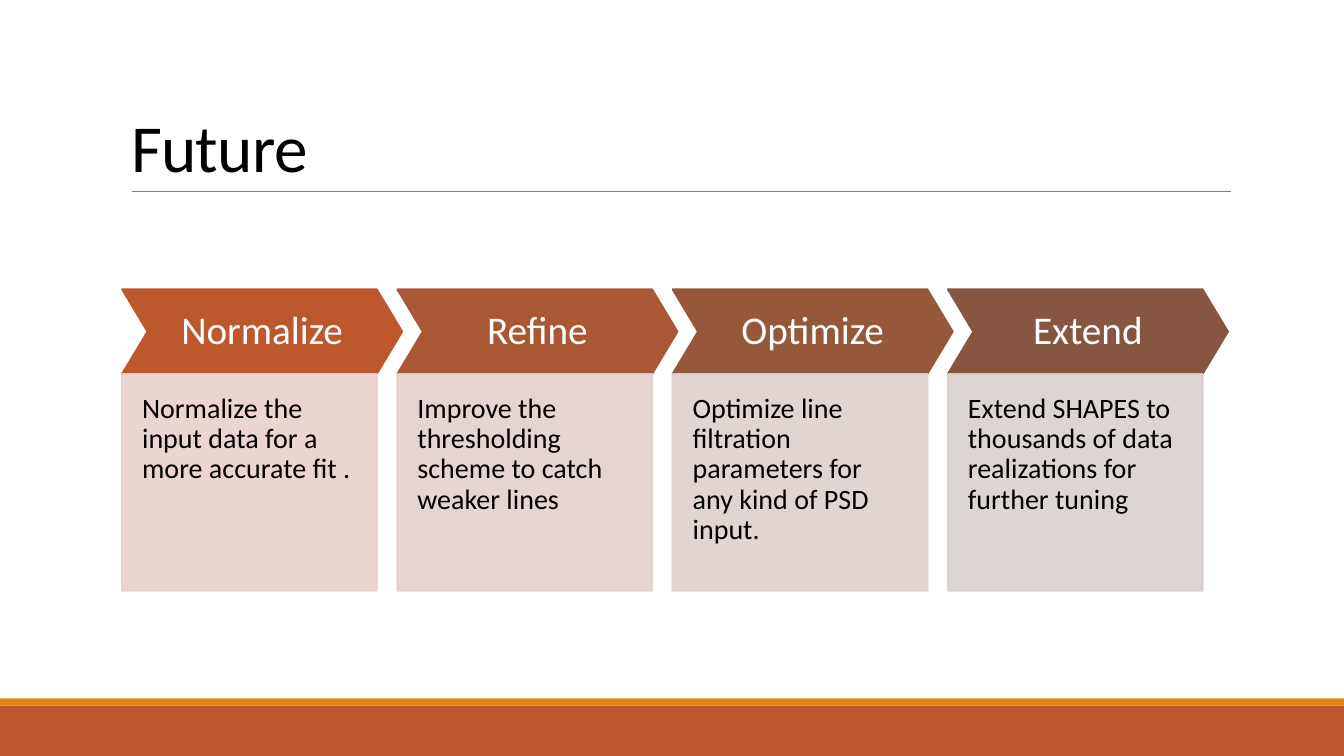
from lxml import etree
from pptx import Presentation
from pptx.dml.color import RGBColor
from pptx.enum.shapes import MSO_CONNECTOR, MSO_SHAPE
from pptx.enum.text import MSO_ANCHOR, MSO_AUTO_SIZE, PP_ALIGN
from pptx.oxml.ns import qn
from pptx.util import Inches, Pt

RECT, CHEVRON = MSO_SHAPE.RECTANGLE, MSO_SHAPE.CHEVRON
STRAIGHT = MSO_CONNECTOR.STRAIGHT
TOP, MIDDLE, BOTTOM = MSO_ANCHOR.TOP, MSO_ANCHOR.MIDDLE, MSO_ANCHOR.BOTTOM
LEFT, CENTER = PP_ALIGN.LEFT, PP_ALIGN.CENTER
NO_FIT = MSO_AUTO_SIZE.NONE

FONT = "Calibri"
BLACK = RGBColor(0x00, 0x00, 0x00)
WHITE = RGBColor(0xFF, 0xFF, 0xFF)
GRAY = RGBColor(0x80, 0x80, 0x80)
RUST = RGBColor(0xBD, 0x58, 0x2C)
ORANGE = RGBColor(0xE4, 0x83, 0x12)

# Heading, detail, chevron colour, panel colour
STEPS = [
    ("Normalize", "Normalize the input data for a more accurate fit .",
     RUST, RGBColor(0xE8, 0xD1, 0xCD)),
    ("Refine", "Improve the thresholding scheme to catch weaker lines",
     RGBColor(0xAA, 0x58, 0x34), RGBColor(0xE3, 0xD1, 0xCD)),
    ("Optimize", "Optimize line filtration parameters for any kind of PSD input.",
     RGBColor(0x97, 0x57, 0x3A), RGBColor(0xDE, 0xD1, 0xCE)),
    ("Extend", "Extend SHAPES to thousands of data realizations for further tuning",
     RGBColor(0x86, 0x56, 0x40), RGBColor(0xD9, 0xD1, 0xCF)),
]


def add_block(slide, kind, box, color, edge=False):
    shape = slide.shapes.add_shape(kind, *map(Inches, box))
    shape.shadow.inherit = False
    shape.fill.solid()
    shape.fill.fore_color.rgb = color
    if edge:
        shape.line.color.rgb = color
        shape.line.width = Pt(1.25)
    else:
        shape.line.fill.background()
    return shape


def set_text(shape, text, size, color, align, anchor, insets, spacing):
    frame = shape.text_frame
    frame.word_wrap = True
    frame.auto_size = NO_FIT
    frame.vertical_anchor = anchor
    (frame.margin_left, frame.margin_top,
     frame.margin_right, frame.margin_bottom) = map(Inches, insets)
    para = frame.paragraphs[0]
    para.alignment = align
    para.line_spacing = spacing
    run = para.add_run()
    run.text = text
    run.font.name = FONT
    run.font.size = Pt(size)
    run.font.color.rgb = color
    return run


def fade(shape, percent):
    for color in shape._element.spPr.iter(qn("a:srgbClr")):
        etree.SubElement(color, qn("a:alpha"), val=str(percent * 1000))


def add_footer(slide, left, top, width, height):
    stripe = 0.07
    add_block(slide, RECT, (left, top + stripe, width, height - stripe), RUST)
    add_block(slide, RECT, (left, top, width, stripe), ORANGE)


def add_title(slide, left, top, width, height):
    # Rule below the heading
    base = Inches(top + height)
    rule = slide.shapes.add_connector(
        STRAIGHT, Inches(left + 0.11), base, Inches(left + width + 0.01), base)
    rule.line.color.rgb = GRAY
    rule.line.width = Pt(0.5)
    etree.SubElement(rule._element.spPr, qn("a:effectLst"))
    # Heading
    title = slide.shapes.title
    title.left, title.top = Inches(left), Inches(top)
    title.width, title.height = Inches(width), Inches(height)
    run = set_text(title, "Future", 48, BLACK, LEFT, BOTTOM,
                   (0.1, 0.05, 0.1, 0.05), 0.85)
    run.font._element.set("spc", "-50")


def add_step(slide, left, top, width, height, step):
    name, detail, dark, pale = step
    head, tip = 0.84, 0.25
    # Chevron heading
    arrow = add_block(slide, CHEVRON, (left, top, width, head), dark, True)
    arrow.adjustments[0] = 0.3
    set_text(arrow, name, 28, WHITE, CENTER, MIDDLE, (0.1,) * 4, 0.9)
    # Detail panel
    panel = add_block(slide, RECT, (left, top + head, width - tip, height - head),
                      pale, True)
    fade(panel, 90)
    set_text(panel, detail, 20, BLACK, LEFT, TOP, (0.2, 0.2, 0.2, 0.4), 0.9)


def add_steps(slide, left, top, width, height):
    pitch = 2.73
    last = width - pitch * (len(STEPS) - 1)
    for i, step in enumerate(STEPS):
        add_step(slide, left + i * pitch, top, last, height, step)


def main():
    deck = Presentation()
    deck.slide_width, deck.slide_height = Inches(13.33), Inches(7.5)
    slide = deck.slides.add_slide(deck.slide_layouts[5])
    add_footer(slide, 0, 6.93, 13.33, 0.57)
    add_title(slide, 1.2, 0.31, 11, 1.59)
    add_steps(slide, 1.21, 2.87, 10.97, 2.99)
    deck.save("out.pptx")


if __name__ == "__main__":
    main()
